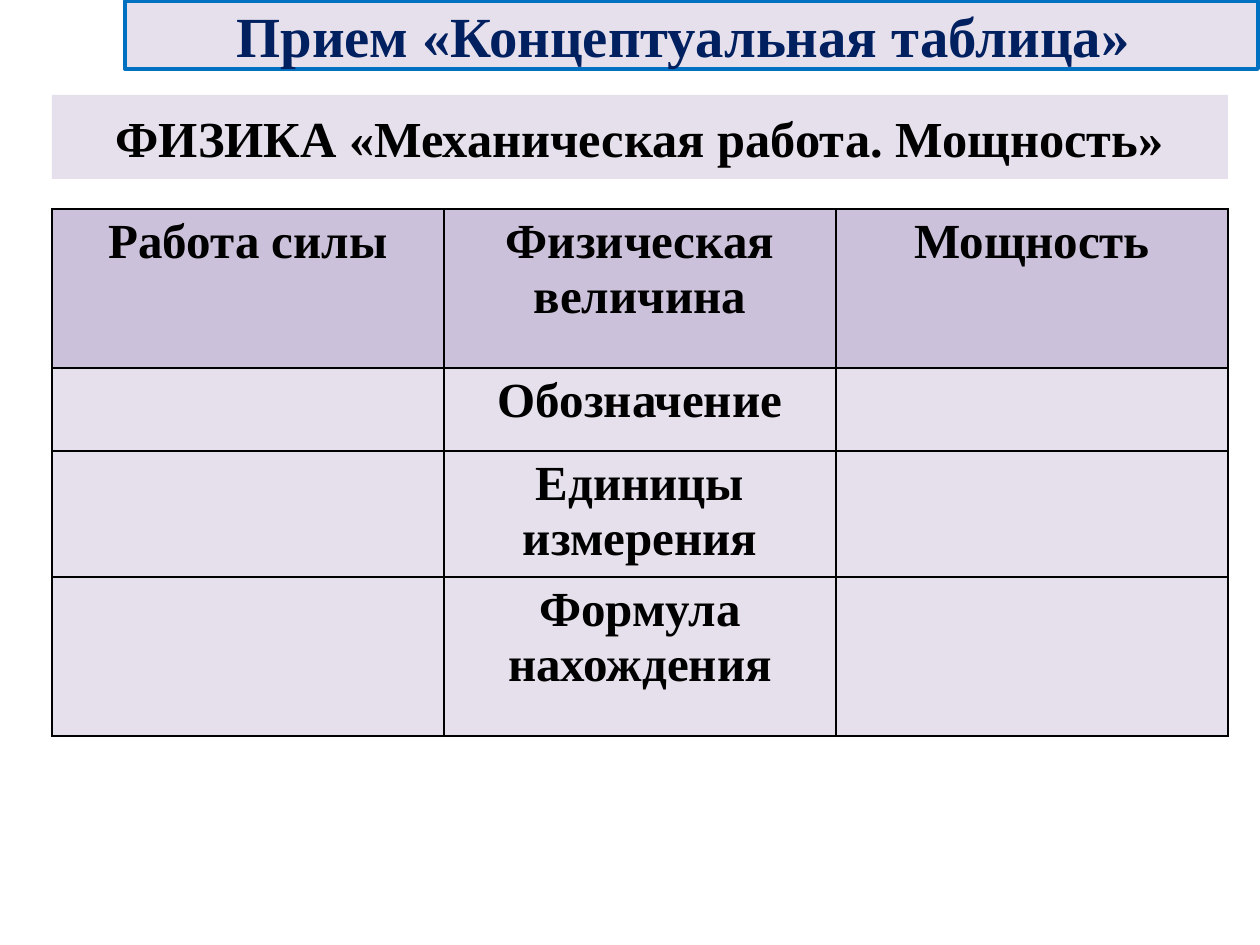
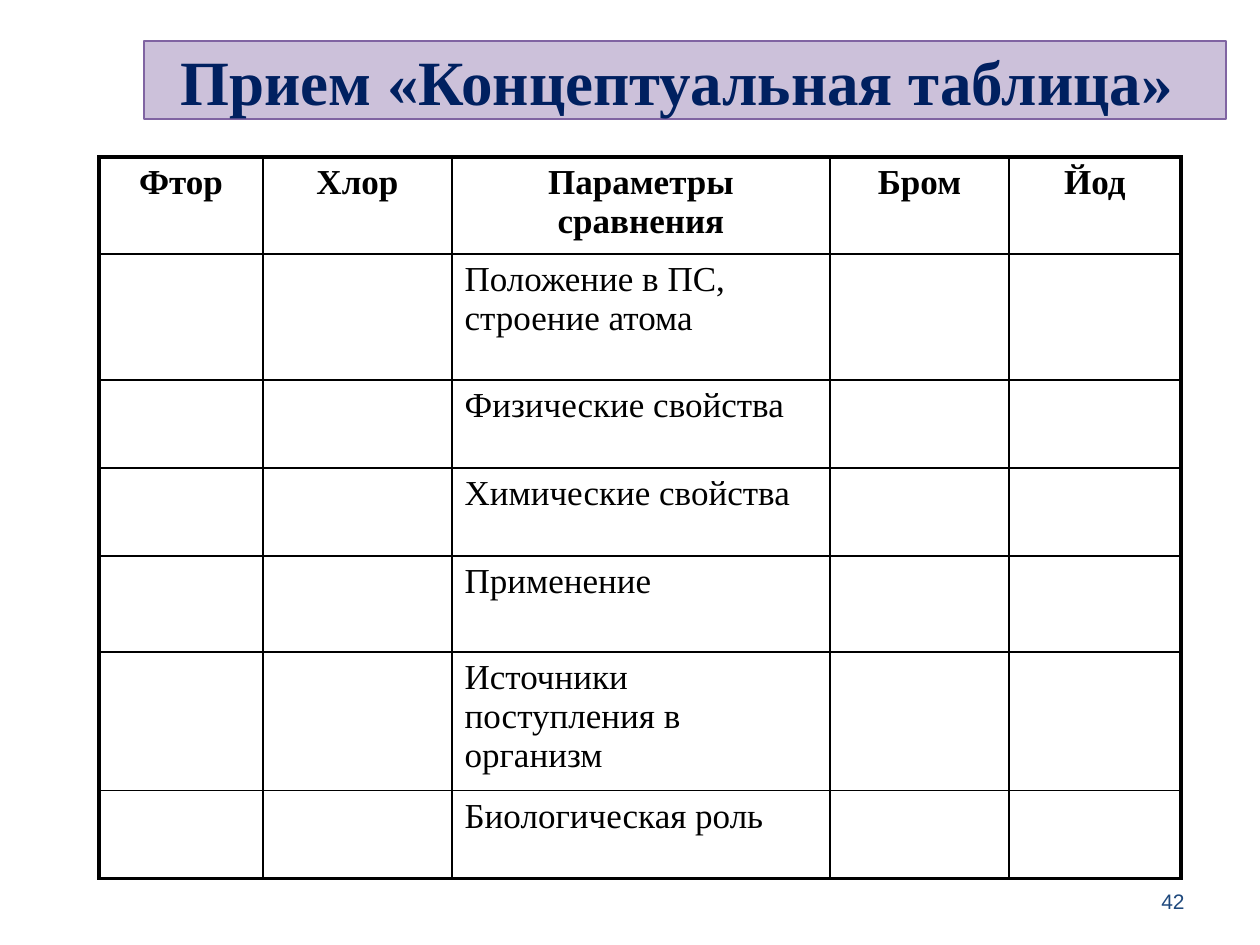
import pptx
import pptx.dml.color
import pptx.enum.shapes
import pptx.enum.text
import pptx.oxml.ns
import pptx.util
from lxml import etree

EMU_PER_PX = 914400 / 126
COLORS = {
    "navy": "002060",
    "blue": "0070C0",
    "violet": "8064A2",
    "lilac": "CCC1DA",
    "pale": "E6E0EC",
    "number": "1F497D",
    "black": "000000",
}
SERIF = "Times New Roman"
ALIGN = pptx.enum.text.PP_ALIGN
METHOD_TITLE = "Прием «Концептуальная таблица»"
THIN, THICK = 1, 2.25


def px(length):
    return pptx.util.Emu(round(length * EMU_PER_PX))


def rgb(name):
    return pptx.dml.color.RGBColor.from_string(COLORS[name])


def write(text_frame, text, size, color="black", bold=True, align=ALIGN.CENTER, font_name=SERIF):
    text_frame.word_wrap = True
    paragraph = text_frame.paragraphs[0]
    paragraph.alignment = align
    run = paragraph.add_run()
    run.text = text
    run.font.name = font_name
    run.font.size = pptx.util.Pt(size)
    run.font.bold = bold
    run.font.color.rgb = rgb(color)


def place(shape, box):
    shape.left, shape.top, shape.width, shape.height = map(px, box)


def style_band(shape, box, text, size, color, fill, line=None, line_width=THIN, right_inset=13):
    """Turn a shape or title placeholder into a filled heading band."""
    place(shape, box)
    shape.fill.solid()
    shape.fill.fore_color.rgb = rgb(fill)
    if line:
        shape.line.color.rgb = rgb(line)
        shape.line.width = pptx.util.Pt(line_width)
    text_frame = shape.text_frame
    text_frame.auto_size = pptx.enum.text.MSO_AUTO_SIZE.NONE
    text_frame.vertical_anchor = pptx.enum.text.MSO_ANCHOR.MIDDLE
    text_frame.margin_right = px(right_inset)
    write(text_frame, text, size, color)


def set_borders(cell, widths):
    """Draw black borders; widths maps L, R, T, B to points."""
    properties = cell._tc.get_or_add_tcPr()
    for side, width in widths.items():
        line = etree.SubElement(properties, pptx.oxml.ns.qn(f"a:ln{side}"), w=str(pptx.util.Pt(width)))
        fill = etree.SubElement(line, pptx.oxml.ns.qn("a:solidFill"))
        etree.SubElement(fill, pptx.oxml.ns.qn("a:srgbClr"), val=COLORS["black"])


def add_grid(slide, origin, column_widths, row_heights, texts, size, fills=(None, None),
             frame=THIN, body_bold=True, body_align=ALIGN.CENTER):
    """Add a table; texts maps (row, column) to wording, fills are header and body."""
    left, top = origin
    last_row, last_column = len(row_heights) - 1, len(column_widths) - 1
    table = slide.shapes.add_table(
        last_row + 1, last_column + 1, px(left), px(top),
        px(sum(column_widths)), px(sum(row_heights))).table
    table.first_row = table.horz_banding = False
    for column, width in zip(table.columns, column_widths):
        column.width = px(width)
    for row_index, (row, height) in enumerate(zip(table.rows, row_heights)):
        row.height = px(height)
        is_header = row_index == 0
        for column_index, cell in enumerate(row.cells):
            set_borders(cell, {
                "L": frame if column_index == 0 else THIN,
                "R": frame if column_index == last_column else THIN,
                "T": frame if is_header else THIN,
                "B": frame if row_index == last_row else THIN,
            })
            fill = fills[0] if is_header else fills[1]
            if fill:
                cell.fill.solid()
                cell.fill.fore_color.rgb = rgb(fill)
            else:
                cell.fill.background()
            text = texts.get((row_index, column_index))
            if text:
                write(cell.text_frame, text, size, bold=is_header or body_bold,
                      align=ALIGN.CENTER if is_header else body_align)


def table_texts(headers, parameters):
    """Place headers in the first row and parameters down the middle column."""
    texts = {(0, column): header for column, header in enumerate(headers)}
    texts.update({(row, len(headers) // 2): parameter
                  for row, parameter in enumerate(parameters, start=1)})
    return texts


def add_slide_number(slide, box, number):
    text_box = slide.shapes.add_textbox(*map(px, box))
    text_box.text_frame.vertical_anchor = pptx.enum.text.MSO_ANCHOR.MIDDLE
    write(text_box.text_frame, number, 12, "number", bold=False,
          align=ALIGN.RIGHT, font_name="Arial")


def build_physics_slide(slide):
    style_band(slide.shapes.title, (52, 95, 1176, 84),
               "ФИЗИКА «Механическая работа. Мощность»", 28.8, "black", "pale")
    add_grid(slide, (52, 209), [392] * 3, [159, 83, 126, 159],
             table_texts(["Работа силы", "Физическая величина", "Мощность"],
                         ["Обозначение", "Единицы измерения", "Формула нахождения"]),
             28, fills=("lilac", "pale"))
    band = slide.shapes.add_shape(pptx.enum.shapes.MSO_SHAPE.RECTANGLE, 0, 0, 0, 0)
    band.shadow.inherit = False
    style_band(band, (125, 1, 1133, 68), METHOD_TITLE, 32.4, "navy", "pale",
               "blue", 2.25, right_inset=29)


def build_halogens_slide(slide):
    add_slide_number(slide, (903, 876, 294, 50), "42")
    style_band(slide.shapes.title, (144, 41, 1082, 78), METHOD_TITLE, 36, "navy", "lilac",
               "violet", 0.75, right_inset=29)
    add_grid(slide, (99, 157), [164, 189, 378, 179, 172], [97, 126, 88, 88, 96, 129, 88],
             table_texts(["Фтор", "Хлор", "Параметры сравнения", "Бром", "Йод"],
                         ["Положение в ПС, строение атома", "Физические свойства",
                          "Химические свойства", "Применение",
                          "Источники поступления в организм", "Биологическая роль"]),
             20, frame=THICK, body_bold=False, body_align=ALIGN.LEFT)


def main():
    presentation = pptx.Presentation()
    presentation.slide_width, presentation.slide_height = px(1260), px(945)
    title_only = presentation.slide_layouts[5]
    for build in (build_physics_slide, build_halogens_slide):
        build(presentation.slides.add_slide(title_only))
    presentation.save("out.pptx")


if __name__ == "__main__":
    main()
